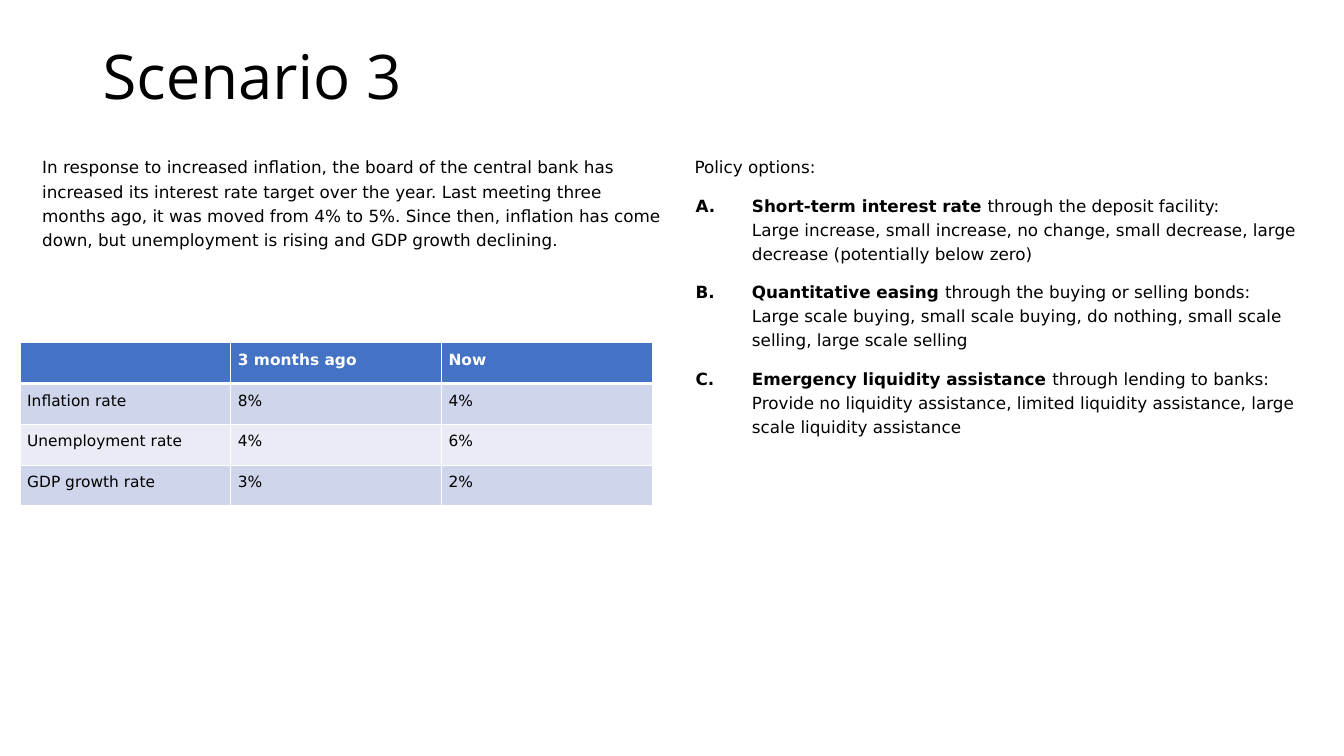
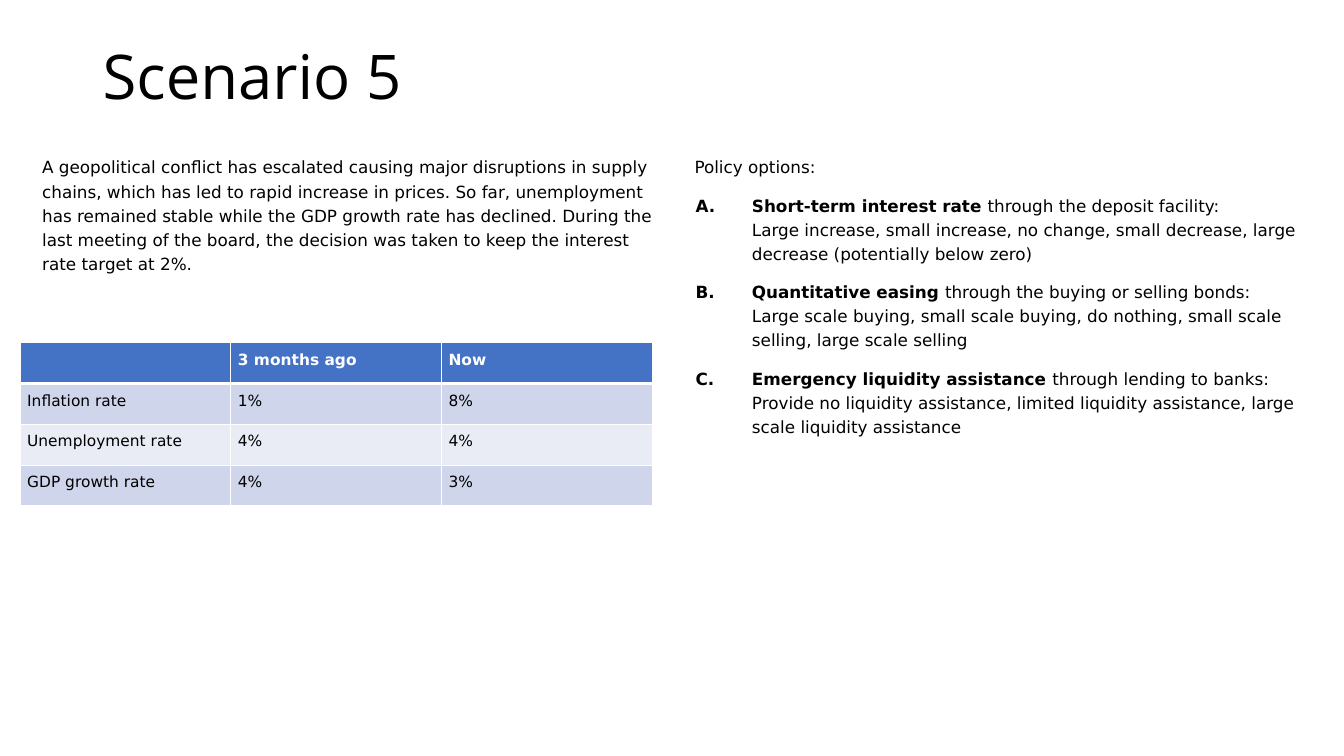
"""Builds two central bank scenario slides with indicators and policy options."""
from lxml import etree
from pptx import Presentation
from pptx import util as u
from pptx.dml.color import RGBColor
from pptx.enum import text
from pptx.oxml import ns

PX = 9144


class Theme:
    ink = RGBColor.from_string("000000")
    paper = RGBColor.from_string("FFFFFF")
    header = RGBColor.from_string("4472C4")
    bands = [RGBColor.from_string("CFD5EA"), RGBColor.from_string("E9EBF5")]
    title = {"name": "Open Sans", "size": u.Pt(44)}
    body = {"name": "DejaVu Sans", "size": u.Pt(12)}
    cell = {"name": "DejaVu Sans", "size": u.Pt(11)}
    body_spacing = {"line_spacing": 1.2, "space_before": u.Pt(10)}
    cell_spacing = {"line_spacing": 1.07, "space_after": u.Pt(8)}
    cell_margins = {f"margin_{side}": 7 * PX for side in ("left", "right", "top", "bottom")}
    thin, thick = u.Pt(1), u.Pt(3)


def assign(target, formats):
    for attribute, value in formats.items():
        setattr(target, attribute, value)


def write(paragraph, words, font, color=Theme.ink, bold=False):
    run = paragraph.add_run()
    run.text = words
    assign(run.font, font | {"bold": bold})
    run.font.color.rgb = color


scenarios = [
    ("Scenario 3",
     "In response to increased inflation, the board of the central bank has increased its "
     "interest rate target over the year. Last meeting three months ago, it was moved from "
     "4% to 5%. Since then, inflation has come down, but unemployment is rising and GDP "
     "growth declining.",
     [("8%", "4%"), ("4%", "6%"), ("3%", "2%")]),
    ("Scenario 5",
     "A geopolitical conflict has escalated causing major disruptions in supply chains, which "
     "has led to rapid increase in prices. So far, unemployment has remained stable while the "
     "GDP growth rate has declined. During the last meeting of the board, the decision was "
     "taken to keep the interest rate target at 2%.",
     [("1%", "8%"), ("4%", "4%"), ("4%", "3%")]),
]
periods = ("", "3 months ago", "Now")
indicators = ("Inflation rate", "Unemployment rate", "GDP growth rate")
policies = [
    ("Short-term interest rate ", "through the deposit facility:",
     "Large increase, small increase, no change, small decrease, large decrease "
     "(potentially below zero)"),
    ("Quantitative easing ", "through the buying or selling bonds:",
     "Large scale buying, small scale buying, do nothing, small scale selling, "
     "large scale selling"),
    ("Emergency liquidity assistance ", "through lending to banks:",
     "Provide no liquidity assistance, limited liquidity assistance, "
     "large scale liquidity assistance"),
]
areas = {
    "title": (92, 2, 1242, 145),
    "situation": (20, 147, 647, 547),
    "options": (667, 147, 647, 547),
}
table_area = (20, 340, 627, 162)
intro_indent = {"marL": 12 * PX, "indent": 0}
option_indent = {"marL": 69 * PX, "indent": -56 * PX}

deck = Presentation()
assign(deck, {"slide_width": 1333 * PX, "slide_height": 750 * PX})

for heading, situation, figures in scenarios:
    slide = deck.slides.add_slide(deck.slide_layouts[6])
    frames = {}
    for part, area in areas.items():
        frames[part] = slide.shapes.add_textbox(*(n * PX for n in area)).text_frame
        frames[part].word_wrap = True

    frames["title"].vertical_anchor = text.MSO_ANCHOR.MIDDLE
    write(frames["title"].paragraphs[0], heading, Theme.title)

    for part, words in (("situation", situation), ("options", "Policy options:")):
        intro = frames[part].paragraphs[0]
        assign(intro, Theme.body_spacing)
        write(intro, words, Theme.body)
        for key, value in intro_indent.items():
            intro._p.get_or_add_pPr().set(key, str(value))

    for policy, channel, choices in policies:
        option = frames["options"].add_paragraph()
        assign(option, Theme.body_spacing)
        write(option, policy, Theme.body, bold=True)
        write(option, channel, Theme.body)
        option.add_line_break()
        write(option, choices, Theme.body)
        properties = option._p.get_or_add_pPr()
        for key, value in option_indent.items():
            properties.set(key, str(value))
        bullet_color = etree.SubElement(properties, ns.qn("a:buClr"))
        etree.SubElement(bullet_color, ns.qn("a:srgbClr"), val=str(Theme.ink))
        etree.SubElement(properties, ns.qn("a:buFont"), typeface=Theme.body["name"])
        etree.SubElement(properties, ns.qn("a:buAutoNum"), type="alphaUcPeriod")

    rows = [periods] + [(name, *values) for name, values in zip(indicators, figures)]
    table = slide.shapes.add_table(
        len(rows), len(periods), *(n * PX for n in table_area)).table
    for r, row in enumerate(rows):
        is_header = r == 0
        edges = {
            "lnL": Theme.thin,
            "lnR": Theme.thin,
            "lnT": Theme.thick if r == 1 else Theme.thin,
            "lnB": Theme.thick if is_header else Theme.thin,
        }
        for c, words in enumerate(row):
            cell = table.cell(r, c)
            assign(cell, Theme.cell_margins)
            entry = cell.text_frame.paragraphs[0]
            assign(entry, Theme.cell_spacing)
            if words:
                write(entry, words, Theme.cell,
                      Theme.paper if is_header else Theme.ink, is_header)
            else:
                etree.SubElement(entry._p, ns.qn("a:endParaRPr"),
                                 sz=str(int(Theme.cell["size"].pt * 100)))
            for edge, width in edges.items():
                border = etree.SubElement(
                    cell._tc.get_or_add_tcPr(), ns.qn(f"a:{edge}"), w=str(width))
                border_fill = etree.SubElement(border, ns.qn("a:solidFill"))
                etree.SubElement(border_fill, ns.qn("a:srgbClr"), val=str(Theme.paper))
            cell.fill.solid()
            cell.fill.fore_color.rgb = Theme.header if is_header else Theme.bands[(r - 1) % 2]

deck.save("out.pptx")
